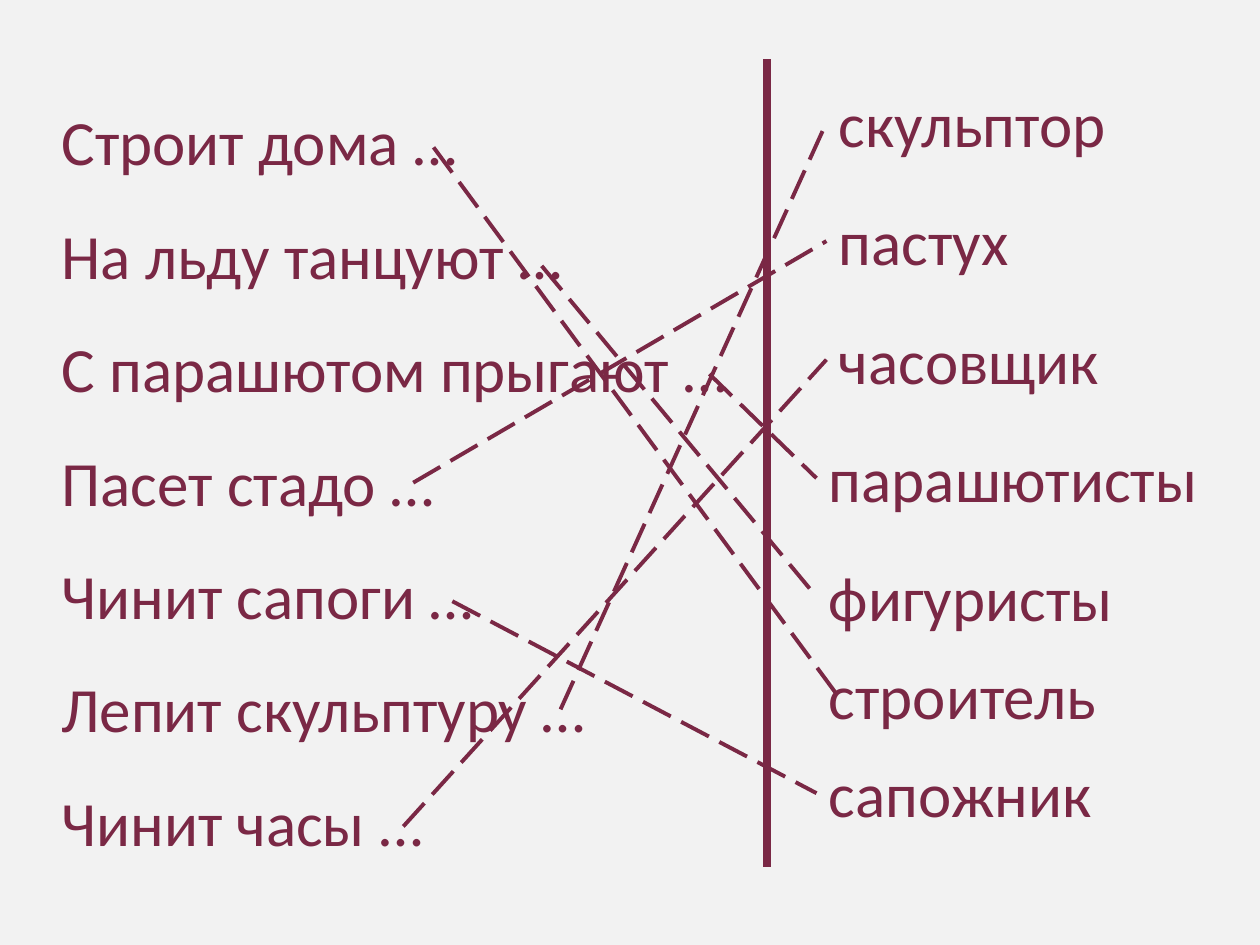
from lxml.etree import SubElement
from pptx import Presentation
from pptx.dml.color import RGBColor
from pptx.enum.dml import MSO_LINE
from pptx.enum.shapes import MSO_CONNECTOR
from pptx.enum.text import MSO_AUTO_SIZE
from pptx.oxml.ns import qn
from pptx.util import Cm, Pt

PLUM = "7A2845"
LEFT_SIDE = 1

# phrase, start of its line, matching profession
CLUES = [
    ("Строит дома …", (8.74, 2.97), "строитель"),
    ("На льду танцуют …", (10.92, 5.36), "фигуристы"),
    ("С парашютом прыгают …", (14.3, 7.54), "парашютисты"),
    ("Пасет стадо …", (8.33, 9.73), "пастух"),
    ("Чинит сапоги …", (9.12, 12.12), "сапожник"),
    ("Лепит скульптуру …", (11.3, 14.3), "скульптор"),
    ("Чинит часы …", (8.13, 16.66), "часовщик"),
]

# profession, left, top, width
PROFESSIONS = [
    ("скульптор", 16.66, 1.57, 5.94),
    ("пастух", 16.66, 3.96, 3.96),
    ("часовщик", 16.66, 6.35, 5.82),
    ("парашютисты", 16.46, 8.74, 8.03),
    ("фигуристы", 16.46, 11.13, 6.3),
    ("строитель", 16.46, 13.11, 5.97),
    ("сапожник", 16.46, 15.09, 5.87),
]


def rgb(color):
    return RGBColor.from_string(color)


def add_text(slide, lines, left, top, width, height, *, size=36, font="Calibri",
             color=PLUM, spacing=None, wrap=False):
    sp = slide.shapes.add_textbox(Cm(left), Cm(top), Cm(width), Cm(height))
    tf = sp.text_frame
    tf.word_wrap = wrap
    tf.auto_size = MSO_AUTO_SIZE.SHAPE_TO_FIT_TEXT
    for i, line in enumerate(lines):
        p = tf.add_paragraph() if i else tf.paragraphs[0]
        if spacing:
            p.line_spacing = spacing
        r = p.add_run()
        r.text = line
        r.font.size = Pt(size)
        r.font.name = font
        r.font.color.rgb = rgb(color)
    return sp


def add_line(slide, start, end, width, dash=None):
    line = slide.shapes.add_connector(
        MSO_CONNECTOR.STRAIGHT, *(Cm(v) for v in (*start, *end)))
    line.line.color.rgb = rgb(PLUM)
    line.line.width = Pt(width)
    if dash:
        line.line.dash_style = dash
    SubElement(line._element.spPr, qn("a:effectLst"))
    return line


def main():
    prs = Presentation()
    prs.slide_width, prs.slide_height = Cm(25.4), Cm(19.05)
    slide = prs.slides.add_slide(prs.slide_layouts[6])
    slide.background.fill.solid()
    slide.background.fill.fore_color.rgb = rgb("F2F2F2")

    add_text(slide, [phrase for phrase, _, _ in CLUES], 0.99, 1.19, 14.3, 16.41,
             spacing=1.5, wrap=True)
    add_line(slide, (15.47, 1.19), (15.47, 17.48), 4.5)

    boxes = {word: add_text(slide, [word], left, top, width, 1.8)
             for word, left, top, width in PROFESSIONS}
    for _, start, word in CLUES:
        line = add_line(slide, start, (16.87, 14), 2.25, MSO_LINE.LONG_DASH)
        if word != "строитель":  # this line runs on into its word
            line.end_connect(boxes[word], LEFT_SIDE)

    prs.save("out.pptx")


if __name__ == "__main__":
    main()
